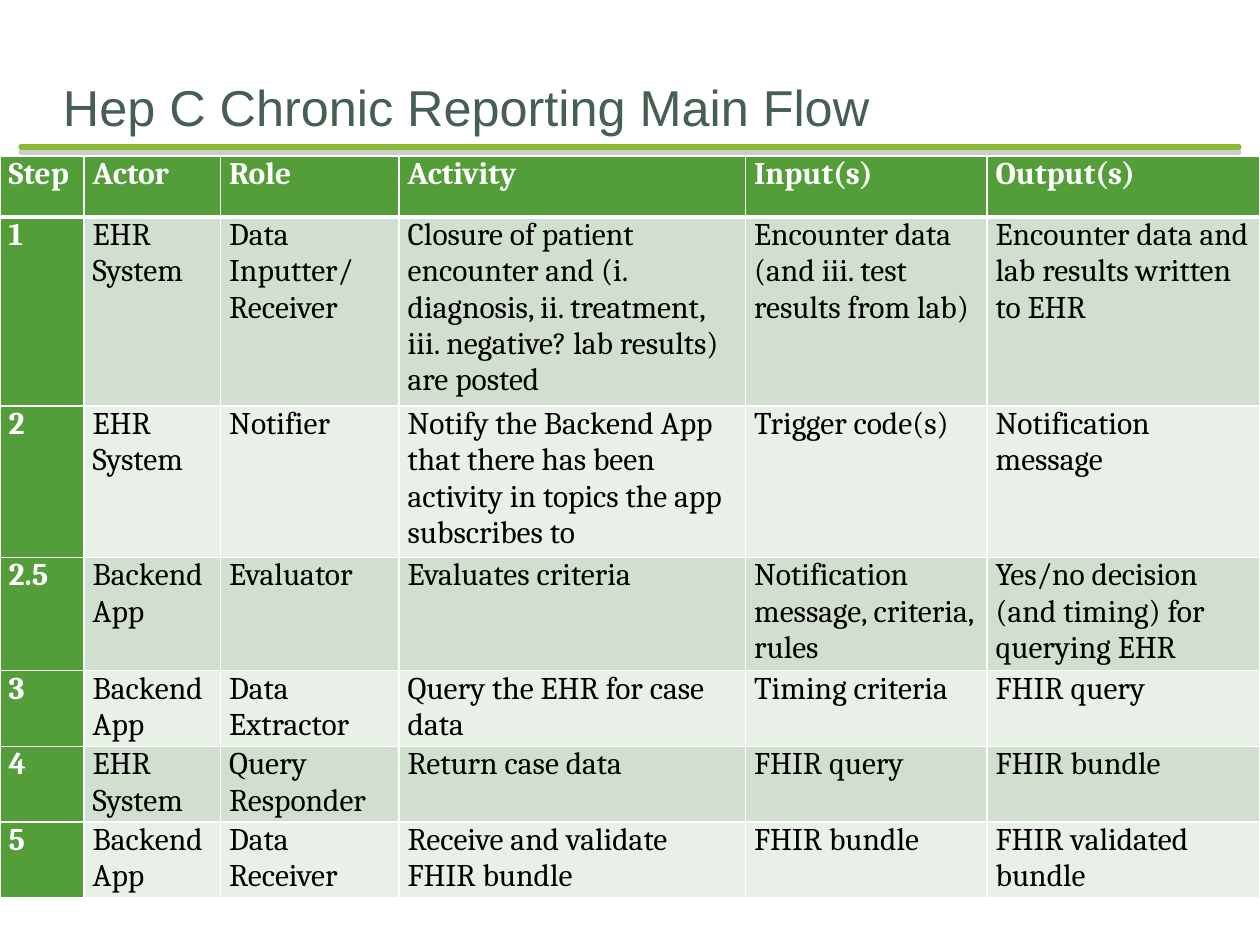
import pptx
import pptx.dml.color
import pptx.enum.shapes
import pptx.enum.text
import pptx.oxml
import pptx.oxml.ns
import pptx.util

Pt = pptx.util.Pt
NAMESPACE = pptx.oxml.ns.nsdecls("a")

WHITE, BLACK = "FFFFFF", "000000"
GREEN, LIME, SLATE = "549E39", "8AB833", "455F51"
BANDS = ("D1DFCE", "E9F0E8")

HEADINGS = ("Step", "Actor", "Role", "Activity", "Input(s)", "Output(s)")
COLUMN_WIDTHS = (48, 78, 102, 198, 138, 156)
HEADING_HEIGHT = 34.5
LINE_HEIGHT = 20.8

# Number of text lines in the row, then its cells
STEPS = (
    (5, ("1", "EHR System", "Data Inputter/ Receiver",
         "Closure of patient encounter and (i. diagnosis, ii. treatment, "
         "iii. negative? lab results) are posted",
         "Encounter data (and iii. test results from lab)",
         "Encounter data and lab results written to EHR")),
    (4, ("2", "EHR System", "Notifier",
         "Notify the Backend App that there has been activity in topics "
         "the app subscribes to",
         "Trigger code(s)", "Notification message")),
    (3, ("2.5", "Backend App", "Evaluator", "Evaluates criteria",
         "Notification message, criteria, rules",
         "Yes/no decision (and timing) for querying EHR")),
    (2, ("3", "Backend App", "Data Extractor", "Query the EHR for case data",
         "Timing criteria", "FHIR query")),
    (2, ("4", "EHR System", "Query Responder", "Return case data",
         "FHIR query", "FHIR bundle")),
    (2, ("5", "Backend App", "Data Receiver",
         "Receive and validate FHIR bundle",
         "FHIR bundle", "FHIR validated bundle")),
)


def rgb(value):
    return pptx.dml.color.RGBColor.from_string(value)


class SlideBuilder:
    title_font = "Arial"
    table_font = "Cambria"

    def __init__(self, slide):
        self.slide = slide

    def add_run(self, paragraph, text, font, size, color, bold=False):
        run = paragraph.add_run()
        run.text = text
        run.font.name = font
        run.font.size = Pt(size)
        run.font.bold = bold
        run.font.color.rgb = rgb(color)

    def title(self, text, left, top, width, height):
        heading = self.slide.shapes.add_textbox(
            Pt(left), Pt(top), Pt(width), Pt(height))
        frame = heading.text_frame
        frame.word_wrap = True
        frame.vertical_anchor = pptx.enum.text.MSO_ANCHOR.BOTTOM
        frame.margin_left = frame.margin_right = frame.margin_bottom = 0
        frame.margin_top = Pt(3.6)
        self.add_run(frame.paragraphs[0], text, self.title_font, 28.8, SLATE)

    def rule(self, left, right, y):
        """Draw a round-ended horizontal line with a soft grey shadow below."""
        divider = self.slide.shapes.add_connector(
            pptx.enum.shapes.MSO_CONNECTOR.STRAIGHT,
            Pt(left), Pt(y), Pt(right), Pt(y))
        divider.line.color.rgb = rgb(LIME)
        divider.line.width = Pt(3)
        divider.line._get_or_add_ln().set("cap", "rnd")
        divider._element.spPr.append(pptx.oxml.parse_xml(
            f'<a:effectLst {NAMESPACE}><a:outerShdw blurRad="0" '
            f'dist="{Pt(3)}" dir="5400000" rotWithShape="0">'
            '<a:srgbClr val="808080"><a:alpha val="40000"/></a:srgbClr>'
            '</a:outerShdw></a:effectLst>'))

    def borders(self, cell, top=1, bottom=1):
        widths = {"lnL": 1, "lnR": 1, "lnT": top, "lnB": bottom}
        properties = cell._tc.get_or_add_tcPr()
        for side, width in widths.items():
            properties.append(pptx.oxml.parse_xml(
                f'<a:{side} {NAMESPACE} w="{Pt(width)}"><a:solidFill>'
                f'<a:srgbClr val="{WHITE}"/></a:solidFill></a:{side}>'))

    def cell(self, cell, text, fill, color, bold, top=1, bottom=1):
        cell.margin_left = cell.margin_right = Pt(5)
        cell.margin_top = cell.margin_bottom = 0
        self.borders(cell, top, bottom)
        cell.fill.solid()
        cell.fill.fore_color.rgb = rgb(fill)
        self.add_run(cell.text_frame.paragraphs[0], text,
                     self.table_font, 18, color, bold)

    def flow_table(self, left, top):
        heights = [HEADING_HEIGHT] + [n * LINE_HEIGHT for n, _ in STEPS]
        table = self.slide.shapes.add_table(
            len(heights), len(HEADINGS), Pt(left), Pt(top),
            Pt(sum(COLUMN_WIDTHS)), Pt(sum(heights))).table
        for column, width in zip(table.columns, COLUMN_WIDTHS):
            column.width = Pt(width)
        for row, height in zip(table.rows, heights):
            row.height = Pt(height)

        for c, heading in enumerate(HEADINGS):
            self.cell(table.cell(0, c), heading, GREEN, WHITE, True, bottom=3)
        for r, (_, texts) in enumerate(STEPS, start=1):
            band = BANDS[(r - 1) % 2]
            for c, text in enumerate(texts):
                fill, color = (GREEN, WHITE) if c == 0 else (band, BLACK)
                self.cell(table.cell(r, c), text, fill, color, c == 0,
                          top=3 if r == 1 else 1)


def main():
    deck = pptx.Presentation()
    deck.slide_width, deck.slide_height = Pt(720), Pt(540)
    builder = SlideBuilder(deck.slides.add_slide(deck.slide_layouts[6]))
    builder.rule(12, 708, 84)
    builder.title("Hep C Chronic Reporting Main Flow", 36, 36, 648, 41.8)
    builder.flow_table(0, 89.5)
    deck.save("out.pptx")


if __name__ == "__main__":
    main()
